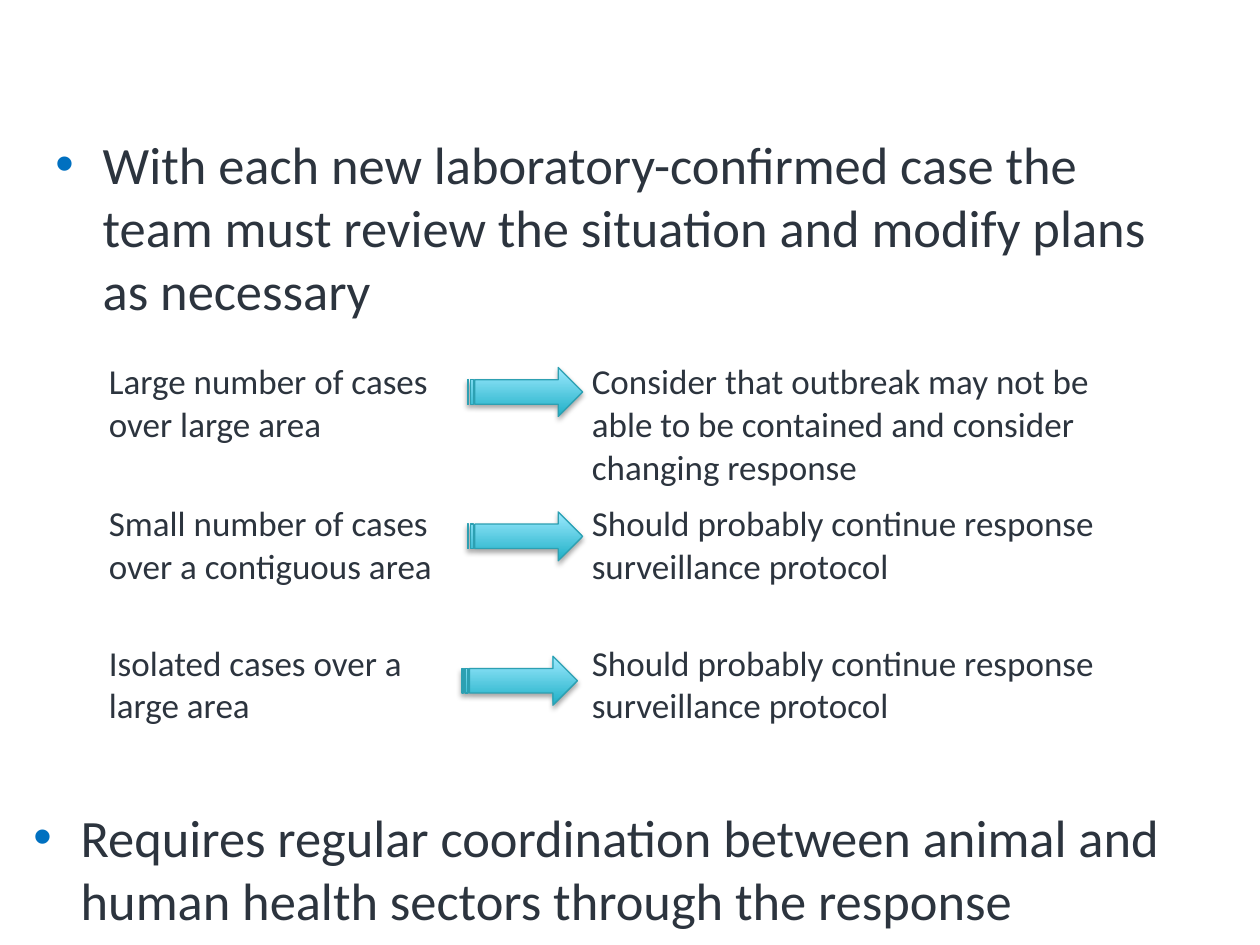
from lxml.etree import SubElement
from pptx import Presentation
from pptx.dml.color import RGBColor
from pptx.enum.shapes import MSO_SHAPE
from pptx.enum.text import MSO_ANCHOR, MSO_AUTO_SIZE
from pptx.oxml.ns import qn
from pptx.util import Pt

COLORS = {
    "text": "2C343E",
    "bullet": "0070C0",
    "arrow_dark": "1EAFC6",
    "arrow_light": "9DEAFF",
    "arrow_line": "2DA0B2",
    "shadow": "000000",
}
FONT = "Calibri"
CASES = [
    ("Large number of cases over large area",
     "Consider that outbreak may not be able to be contained and consider changing response"),
    ("Small number of cases over a contiguous area",
     "Should probably continue response surveillance protocol"),
    ("Isolated cases over a large area",
     "Should probably continue response surveillance protocol"),
]
COLUMN_WIDTHS = [211, 65, 311]
ROW_HEIGHT = 80
ARROW_LEFTS = [267, 267, 264]
ARROW_TOP, ARROW_PITCH = 210, 82.5


def rgb(name):
    return RGBColor.from_string(COLORS[name])


def set_attrs(obj, values):
    for name, value in values.items():
        setattr(obj, name, value)


def format_font(font, size):
    set_attrs(font, {"name": FONT, "size": Pt(size)})
    font.color.rgb = rgb("text")


def write_bullet(sp, text):
    tf = sp.text_frame
    set_attrs(tf, {"word_wrap": True, "auto_size": MSO_AUTO_SIZE.NONE,
                   "vertical_anchor": MSO_ANCHOR.TOP})
    p = tf.paragraphs[0]
    p.space_before = Pt(0)
    pPr = p._p.get_or_add_pPr()
    pPr.set("marL", str(Pt(27)))
    pPr.set("indent", str(-Pt(27)))
    color = SubElement(pPr, qn("a:buClr"))
    SubElement(color, qn("a:srgbClr"), val=COLORS["bullet"])
    SubElement(pPr, qn("a:buFont"), typeface="Arial")
    SubElement(pPr, qn("a:buChar"), char="•")
    r = p.add_run()
    r.text = text
    format_font(r.font, 30)


def add_case_table(s):
    frame = s.shapes.add_table(len(CASES), len(COLUMN_WIDTHS), Pt(55), Pt(203),
                               Pt(sum(COLUMN_WIDTHS)), Pt(ROW_HEIGHT * len(CASES)))
    table = frame.table
    set_attrs(table, {"first_row": False, "horz_banding": False})
    for column, width in zip(table.columns, COLUMN_WIDTHS):
        column.width = Pt(width)
    for row, (situation, response) in zip(table.rows, CASES):
        for cell, text in zip(row.cells, (situation, "", response)):
            cell.fill.background()
            p = cell.text_frame.paragraphs[0]
            if text:
                r = p.add_run()
                r.text = text
                format_font(r.font, 20)


def add_arrow(s, left, top):
    sp = s.shapes.add_shape(MSO_SHAPE.STRIPED_RIGHT_ARROW, Pt(left), Pt(top), Pt(66), Pt(28))
    sp.fill.gradient()
    sp.fill.gradient_angle = 90
    for stop, name in zip(sp.fill.gradient_stops, ("arrow_dark", "arrow_light")):
        stop.color.rgb = rgb(name)
    sp.line.color.rgb = rgb("arrow_line")
    sp.line.width = Pt(0.75)
    sp.shadow.inherit = False
    effects = sp._element.spPr.find(qn("a:effectLst"))
    shadow = SubElement(effects, qn("a:outerShdw"), blurRad=str(Pt(3.1)),
                        dist=str(Pt(1.8)), dir="5400000", rotWithShape="0")
    color = SubElement(shadow, qn("a:srgbClr"), val=COLORS["shadow"])
    SubElement(color, qn("a:alpha"), val="35000")


def main():
    prs = Presentation()
    set_attrs(prs, {"slide_width": Pt(720), "slide_height": Pt(540)})
    s = prs.slides.add_slide(prs.slide_layouts[1])
    title = s.shapes.title._element
    title.getparent().remove(title)

    body = s.placeholders[1]
    set_attrs(body, {"left": Pt(24.5), "top": Pt(72), "width": Pt(648), "height": Pt(443.5)})
    write_bullet(body, "With each new laboratory-confirmed case the team must review "
                       "the situation and modify plans as necessary")
    add_case_table(s)
    for i, left in enumerate(ARROW_LEFTS):
        add_arrow(s, left, ARROW_TOP + i * ARROW_PITCH)
    coordination = s.shapes.add_textbox(Pt(12), Pt(456.5), Pt(708), Pt(80))
    write_bullet(coordination, "Requires regular coordination between animal and human "
                               "health sectors through the response")
    prs.save("out.pptx")


if __name__ == "__main__":
    main()
